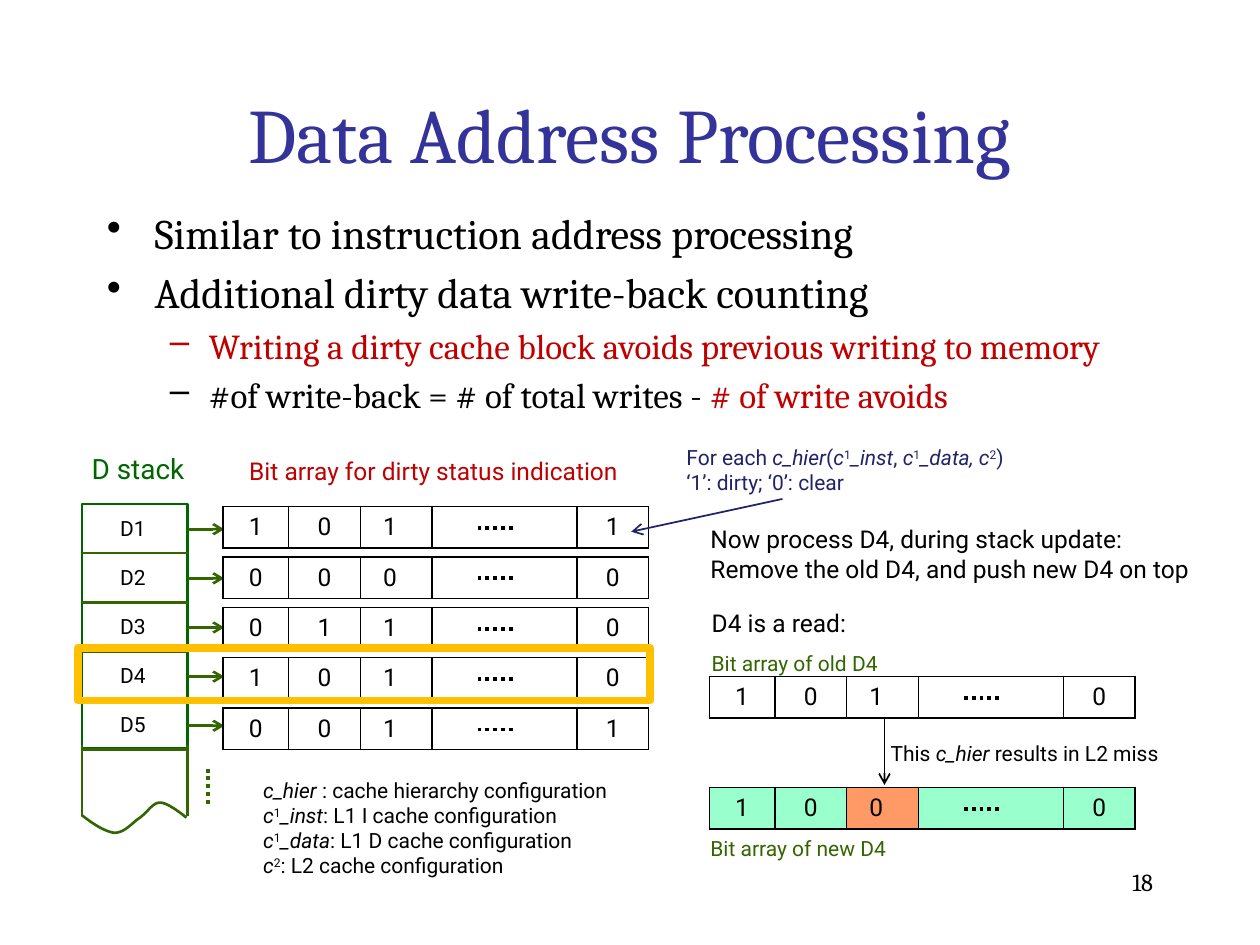
"""Build the slide on data address processing with its stack and bit arrays."""
from itertools import pairwise

from lxml.etree import SubElement
from pptx import Presentation
from pptx.dml.color import RGBColor
from pptx.enum.dml import MSO_LINE_DASH_STYLE as Dash
from pptx.enum.shapes import MSO_CONNECTOR, MSO_SHAPE
from pptx.enum.text import MSO_ANCHOR as Anchor, PP_ALIGN as Align
from pptx.oxml.ns import qn
from pptx.util import Inches, Pt

COLORS = {"title": "333399", "black": "000000", "red": "C00000", "stack": "006600",
          "green": "336600", "navy": "222267", "frame": "FFC000",
          "mint": "99FFCC", "orange": "FF9966"}
SERIF, SANS = "Cambria", "Roboto"

TITLE = "Data Address Processing"
BULLETS = [
    (0, [("Similar to instruction address processing", "black")]),
    (0, [("Additional dirty data write-back counting", "black")]),
    (1, [("Writing a dirty cache block avoids previous writing to memory", "red")]),
    (1, [("#of write-back = # of total writes - ", "black"), ("# of write avoids", "red")]),
]
LEVELS = [{"size": 24, "indent": 0.38, "hanging": 0.38, "bullet": "•", "before": 5},
          {"size": 20, "indent": 0.81, "hanging": 0.31, "bullet": "–", "before": 4}]

STACK = [("D1", "10101"[:3] + "1"), ("D2", "0000"), ("D3", "0110"),
         ("D4", "1010"), ("D5", "0011")]
STACK = [(name, bits) for name, bits in STACK]
OLD_BITS, NEW_BITS = "1010", "1000"
NEW_FILLS = ["mint", "mint", "orange", "mint", "mint"]

C_INST = [("c", "i"), ("1", "sup"), ("_inst", "i")]
C_DATA = [("c", "i"), ("1", "sup"), ("_data", "i")]
C_TWO = [("c", "i"), ("2", "sup")]
TEXTS = [
    ((0.45, 3.53, 1.29, 0.37), 16, "stack", Align.CENTER, [[("D stack", "")]]),
    ((1.88, 3.6, 3.17, 0.27), 14, "red", Align.LEFT,
     [[("Bit array for dirty status indication", "")]]),
    ((5.35, 3.51, 2.83, 0.44), 12, "navy", Align.LEFT,
     [[("For each ", ""), ("c_hier", "i"), ("(", ""), *C_INST, (", ", ""),
       *C_DATA, (", ", "i"), *C_TWO, (")", "")],
      [("‘1’: dirty; ‘0’: clear", "")]]),
    ((5.54, 4.11, 4.23, 0.57), 14, "black", Align.LEFT,
     [[("Now process D4, during stack update:", "")],
      [("Remove the old D4, and push new D4 on top", "")]]),
    ((5.55, 4.79, 4.18, 0.3), 14, "black", Align.LEFT, [[("D4 is a read:", "")]]),
    ((5.55, 5.11, 4.18, 0.3), 12, "green", Align.LEFT, [[("Bit array of old D4", "")]]),
    ((5.54, 6.58, 4.23, 0.3), 12, "green", Align.LEFT, [[("Bit array of new D4", "")]]),
    ((6.97, 5.76, 2.4, 0.44), 12, "black", Align.LEFT,
     [[("This ", ""), ("c_hier", "i"), (" results in L2 miss", "")]]),
    ((1.99, 6.12, 2.95, 0.9), 12, "black", Align.LEFT,
     [[("c_hier ", "i"), (": cache hierarchy configuration", "")],
      [*C_INST, (": L1 I cache configuration", "")],
      [*C_DATA, (": L1 D cache configuration", "")],
      [*C_TWO, (": L2 cache configuration", "")]]),
]

STACK_LEFT, STACK_TOP, STACK_WIDTH, STACK_STEP = 0.65, 4, 0.84, 0.39
ARRAY_LEFT, ARRAY_TOP, ARRAY_STEP, ARRAY_HEIGHT = 1.77, 4.02, 0.4, 0.33
COLUMNS = [0.52, 0.57, 0.57, 1.15, 0.57]
CASE_LEFT, OLD_TOP, NEW_TOP = 5.63, 5.37, 6.25
TEAR_START = (0.65, 6.47)
TEAR = [((0.74, 6.54), (0.83, 6.6), (0.91, 6.61)), ((0.99, 6.61), (1.05, 6.53), (1.11, 6.49)),
        ((1.17, 6.45), (1.21, 6.37), (1.27, 6.37)), ((1.34, 6.37), (1.48, 6.49), (1.48, 6.49))]


def color(name):
    return RGBColor.from_string(COLORS[name])


def apply(target, **values):
    for name, value in values.items():
        setattr(target, name, value)


def add_run(paragraph, text, size, ink, font=SANS, style=""):
    run = paragraph.add_run()
    run.text = text
    apply(run.font, size=Pt(size), name=font, italic=style == "i")
    run.font.color.rgb = color(ink)
    if style == "sup":
        run._r.get_or_add_rPr().set("baseline", "30000")


def add_text(slide, box, size, ink, align, lines, font=SANS, anchor=Anchor.MIDDLE):
    frame = slide.shapes.add_textbox(*map(Inches, box)).text_frame
    apply(frame, word_wrap=True, vertical_anchor=anchor)
    for index, line in enumerate(lines):
        paragraph = frame.add_paragraph() if index else frame.paragraphs[0]
        paragraph.alignment = align
        for text, style in line:
            add_run(paragraph, text, size, ink, font, style)


def add_line(slide, start, end, ink="green", width=1.5, arrow=False, dash=None):
    line = slide.shapes.add_connector(MSO_CONNECTOR.STRAIGHT, *map(Inches, (*start, *end)))
    line.line.color.rgb = color(ink)
    apply(line.line, width=Pt(width), dash_style=dash)
    properties = line._element.spPr
    if arrow:
        SubElement(properties.find(qn("a:ln")), qn("a:tailEnd"), type="arrow")
    SubElement(properties, qn("a:effectLst"))


def outline(shape, ink, width):
    shape.shadow.inherit = False
    shape.fill.background()
    shape.line.color.rgb = color(ink)
    shape.line.width = Pt(width)


def add_frame(slide, box, ink, width):
    outline(slide.shapes.add_shape(MSO_SHAPE.RECTANGLE, *map(Inches, box)), ink, width)


def add_bit_array(slide, left, top, bits, fills=(None,) * 5):
    box = (left, top, sum(COLUMNS), ARRAY_HEIGHT)
    table = slide.shapes.add_table(1, len(COLUMNS), *map(Inches, box)).table
    apply(table, first_row=False, horz_banding=False)
    values = [*bits[:3], "", bits[3]]
    for index, (width, value, fill) in enumerate(zip(COLUMNS, values, fills)):
        table.columns[index].width = Inches(width)
        cell = table.cell(0, index)
        apply(cell, margin_left=0, margin_right=Inches(0.1 if index == 2 else 0),
              margin_top=0, margin_bottom=0, vertical_anchor=Anchor.MIDDLE)
        properties = cell._tc.get_or_add_tcPr()
        for side in ("lnL", "lnR", "lnT", "lnB"):
            border = SubElement(properties, qn(f"a:{side}"), w=str(Pt(1)))
            solid = SubElement(border, qn("a:solidFill"))
            SubElement(solid, qn("a:srgbClr"), val=COLORS["black"])
        if fill:
            cell.fill.solid()
            cell.fill.fore_color.rgb = color(fill)
        else:
            cell.fill.background()
        if value:
            paragraph = cell.text_frame.paragraphs[0]
            paragraph.alignment = Align.CENTER
            add_run(paragraph, value, 14, "black")
    dots_left, dots_top = left + 2.02, top + 0.17
    add_line(slide, (dots_left, dots_top), (dots_left + 0.29, dots_top), "black", 2.25,
             dash=Dash.ROUND_DOT)


def add_tear(slide, steps=12):
    points = []
    for start, curve in zip([TEAR_START] + [curve[-1] for curve in TEAR], TEAR):
        for step in range(1, steps + 1):
            t = step / steps
            weights = ((1 - t) ** 3, 3 * t * (1 - t) ** 2, 3 * t * t * (1 - t), t ** 3)
            points.append(tuple(Inches(sum(w * p[axis] for w, p in zip(weights, (start, *curve))))
                                for axis in (0, 1)))
    builder = slide.shapes.build_freeform(*map(Inches, TEAR_START))
    builder.add_line_segments(points, close=False)
    outline(builder.convert_to_shape(), "green", 1.5)


def add_bullets(slide):
    frame = slide.shapes.add_textbox(*map(Inches, (0.75, 1.6, 8.5, 5.15))).text_frame
    frame.word_wrap = True
    for index, (level, runs) in enumerate(BULLETS):
        look = LEVELS[level]
        paragraph = frame.add_paragraph() if index else frame.paragraphs[0]
        paragraph.level = level
        if index:
            paragraph.space_before = Pt(look["before"])
        properties = paragraph._p.get_or_add_pPr()
        properties.set("marL", str(Inches(look["indent"])))
        properties.set("indent", str(-Inches(look["hanging"])))
        SubElement(properties, qn("a:buChar"), char=look["bullet"])
        for text, ink in runs:
            add_run(paragraph, text, look["size"], ink, SERIF)


def add_stack(slide):
    right = STACK_LEFT + STACK_WIDTH
    add_frame(slide, (STACK_LEFT, STACK_TOP, STACK_WIDTH, 1.94), "stack", 1.5)
    for row, (name, bits) in enumerate(STACK):
        top = STACK_TOP + row * STACK_STEP
        divider = top + STACK_STEP
        add_line(slide, (STACK_LEFT, divider), (right, divider))
        add_text(slide, (0.71, top + 0.04, 0.69, 0.3), 12, "black", Align.CENTER, [[(name, "")]])
        add_line(slide, (right, top + 0.2), (right + 0.29, top + 0.2), arrow=True)
        add_bit_array(slide, ARRAY_LEFT, ARRAY_TOP + row * ARRAY_STEP, bits)
    for side in (STACK_LEFT, right):
        add_line(slide, (side, 5.91), (side, 6.48))
    add_tear(slide)
    add_line(slide, (1.65, 6.1), (1.65, 6.38), width=2.25, dash=Dash.ROUND_DOT)
    add_frame(slide, (0.62, 5.14, 4.54, 0.42), "frame", 4.5)


def main():
    presentation = Presentation()
    apply(presentation, slide_width=Inches(10), slide_height=Inches(7.5))
    slide = presentation.slides.add_slide(presentation.slide_layouts[5])
    title = slide.shapes.title
    apply(title, left=Inches(0.75), top=Inches(0.43), width=Inches(8.5), height=Inches(1.25))
    title.text_frame.vertical_anchor = Anchor.MIDDLE
    title.text_frame.paragraphs[0].alignment = Align.CENTER
    add_run(title.text_frame.paragraphs[0], TITLE, 44, "title", SERIF)
    add_bullets(slide)
    add_stack(slide)
    add_bit_array(slide, CASE_LEFT, OLD_TOP, OLD_BITS)
    add_bit_array(slide, CASE_LEFT, NEW_TOP, NEW_BITS, NEW_FILLS)
    for text in TEXTS:
        add_text(slide, *text)
    add_line(slide, (6.21, 3.96), (5.01, 4.22), "navy", 1, arrow=True)
    add_line(slide, (7.02, 5.71), (7.02, 6.23), "black", 1, arrow=True)
    add_text(slide, (7.17, 6.83, 2.08, 0.5), 14, "black", Align.RIGHT, [[("18", "")]],
             SERIF, Anchor.TOP)
    presentation.save("out.pptx")


if __name__ == "__main__":
    main()
